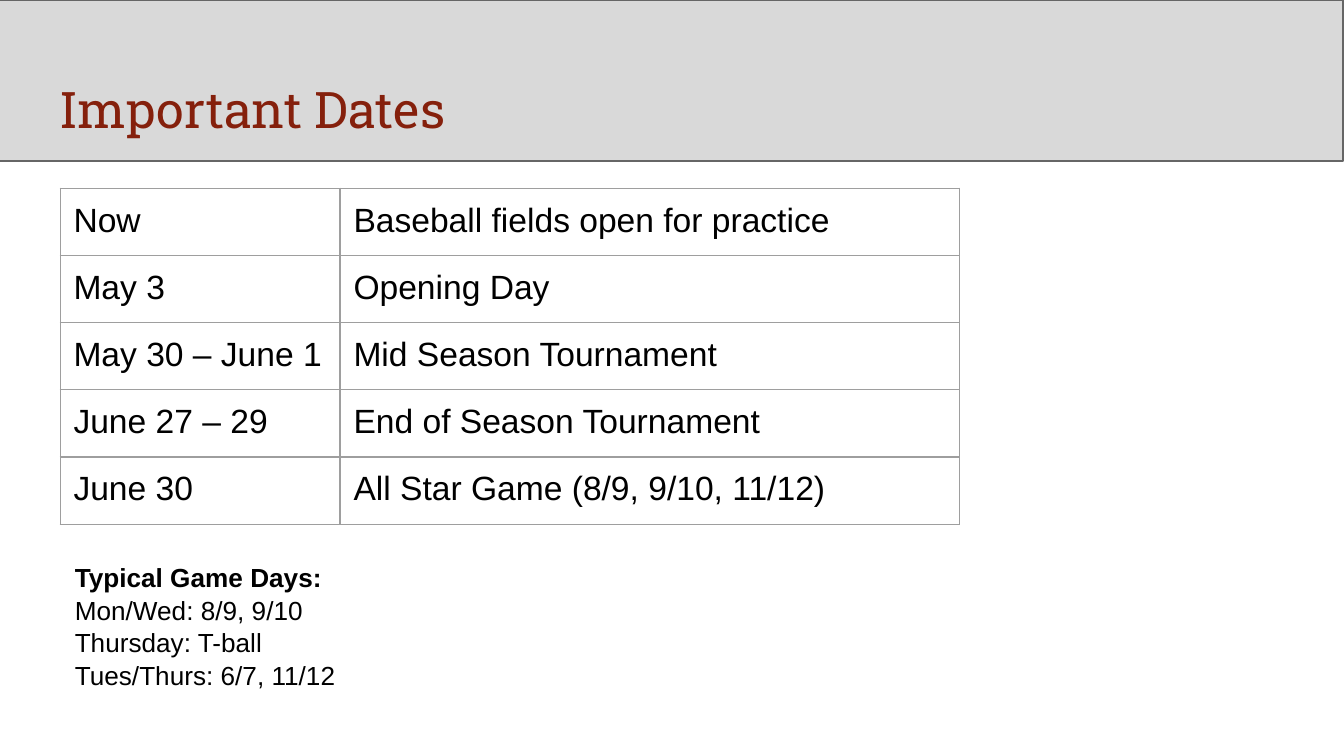
"""Build the Important Dates slide with a schedule table and the typical game days."""

from typing import NamedTuple

from lxml.etree import SubElement
from pptx import Presentation
from pptx.dml.color import RGBColor
from pptx.enum.shapes import MSO_SHAPE
from pptx.enum.text import MSO_ANCHOR, PP_ALIGN
from pptx.oxml import parse_xml
from pptx.oxml.ns import nsdecls, qn
from pptx.util import Pt

BLACK = RGBColor(0x00, 0x00, 0x00)
MAROON = RGBColor(0x85, 0x20, 0x0C)
BAND_GREY = RGBColor(0xD9, 0xD9, 0xD9)
BAND_EDGE = RGBColor(0x66, 0x66, 0x66)
GRID_GREY = RGBColor(0x9E, 0x9E, 0x9E)
INSET = Pt(7.2)
ROW_HEIGHT = Pt(36)
COLUMN_WIDTHS = (Pt(150), Pt(332))


class Event(NamedTuple):
    date: str
    name: str


EVENTS = (
    Event("Now", "Baseball fields open for practice"),
    Event("May 3", "Opening Day"),
    Event("May 30 – June 1", "Mid Season Tournament"),
    Event("June 27 – 29", "End of Season Tournament"),
    Event("June 30", "All Star Game (8/9, 9/10, 11/12)"),
)
GAME_DAYS = (
    "Typical Game Days:",
    "Mon/Wed: 8/9, 9/10",
    "Thursday: T-ball",
    "Tues/Thurs: 6/7, 11/12",
)


def format_text(frame, size: float, color: RGBColor, font: str = "Arial") -> None:
    """Give every run in a text frame the same size, colour and font."""
    for para in frame.paragraphs:
        para.alignment = PP_ALIGN.LEFT
        for span in para.runs:
            span.font.size = Pt(size)
            span.font.name = font
            span.font.color.rgb = color


def set_insets(target) -> None:
    """Apply the common inset to all four sides of a cell or text frame."""
    target.margin_left = target.margin_right = INSET
    target.margin_top = target.margin_bottom = INSET


def add_band(page) -> None:
    """Draw the grey header band behind everything else."""
    band = page.shapes.add_shape(MSO_SHAPE.RECTANGLE, Pt(-0.5), 0, Pt(720), Pt(86.4))
    band.shadow.inherit = False
    band.fill.solid()
    band.fill.fore_color.rgb = BAND_GREY
    band.line.color.rgb = BAND_EDGE
    band.line.width = Pt(0.75)
    page.shapes._spTree.insert(2, band._element)


def add_title(page) -> None:
    """Fill the title placeholder and give its text a soft shadow."""
    title = page.shapes.title
    title.left, title.top, title.width, title.height = Pt(24.5), Pt(35.5), Pt(671), Pt(45.5)
    frame = title.text_frame
    frame.text = "Important Dates"
    frame.vertical_anchor = MSO_ANCHOR.MIDDLE
    set_insets(frame)
    format_text(frame, 27, MAROON, "Roboto Slab")
    fill = frame.paragraphs[0].runs[0].font._element.find(qn("a:solidFill"))
    fill.addnext(parse_xml(
        f'<a:effectLst {nsdecls("a")}>'
        '<a:outerShdw blurRad="38100" dist="38100" dir="2700000" algn="tl">'
        '<a:srgbClr val="000000"><a:alpha val="43000"/></a:srgbClr>'
        '</a:outerShdw></a:effectLst>'
    ))


def add_borders(cell) -> None:
    """Outline a table cell with thin grey lines."""
    properties = cell._tc.get_or_add_tcPr()
    for index, side in enumerate(("lnL", "lnR", "lnT", "lnB")):
        border = properties.makeelement(qn(f"a:{side}"), {"w": str(Pt(0.75))})
        properties.insert(index, border)
        fill = SubElement(border, qn("a:solidFill"))
        SubElement(fill, qn("a:srgbClr"), val=str(GRID_GREY))


def add_schedule(page) -> None:
    """Draw the table of dates and events."""
    table = page.shapes.add_table(
        len(EVENTS), len(COLUMN_WIDTHS), Pt(32.2), Pt(100.8),
        sum(COLUMN_WIDTHS), ROW_HEIGHT * len(EVENTS),
    ).table
    table.first_row = table.horz_banding = False
    for column, width in zip(table.columns, COLUMN_WIDTHS):
        column.width = width
    for row, event in zip(table.rows, EVENTS):
        row.height = ROW_HEIGHT
        for cell, text in zip(row.cells, event):
            cell.text_frame.text = text
            cell.fill.background()
            set_insets(cell)
            format_text(cell.text_frame, 18, BLACK)
            add_borders(cell)


def add_game_days(page) -> None:
    """Write the game days under a bold heading."""
    box = page.shapes.add_textbox(Pt(33), Pt(293), Pt(482), Pt(82))
    frame = box.text_frame
    frame.word_wrap = True
    frame.text = "\n".join(GAME_DAYS)
    set_insets(frame)
    format_text(frame, 14, BLACK)
    for para in frame.paragraphs:
        para.line_spacing = 1.04
    frame.paragraphs[0].runs[0].font.bold = True


def main() -> None:
    """Assemble and save the deck."""
    deck = Presentation()
    deck.slide_width, deck.slide_height = Pt(720), Pt(405)
    page = deck.slides.add_slide(deck.slide_layouts[5])
    add_band(page)
    add_title(page)
    add_schedule(page)
    add_game_days(page)
    deck.save("out.pptx")


if __name__ == "__main__":
    main()
